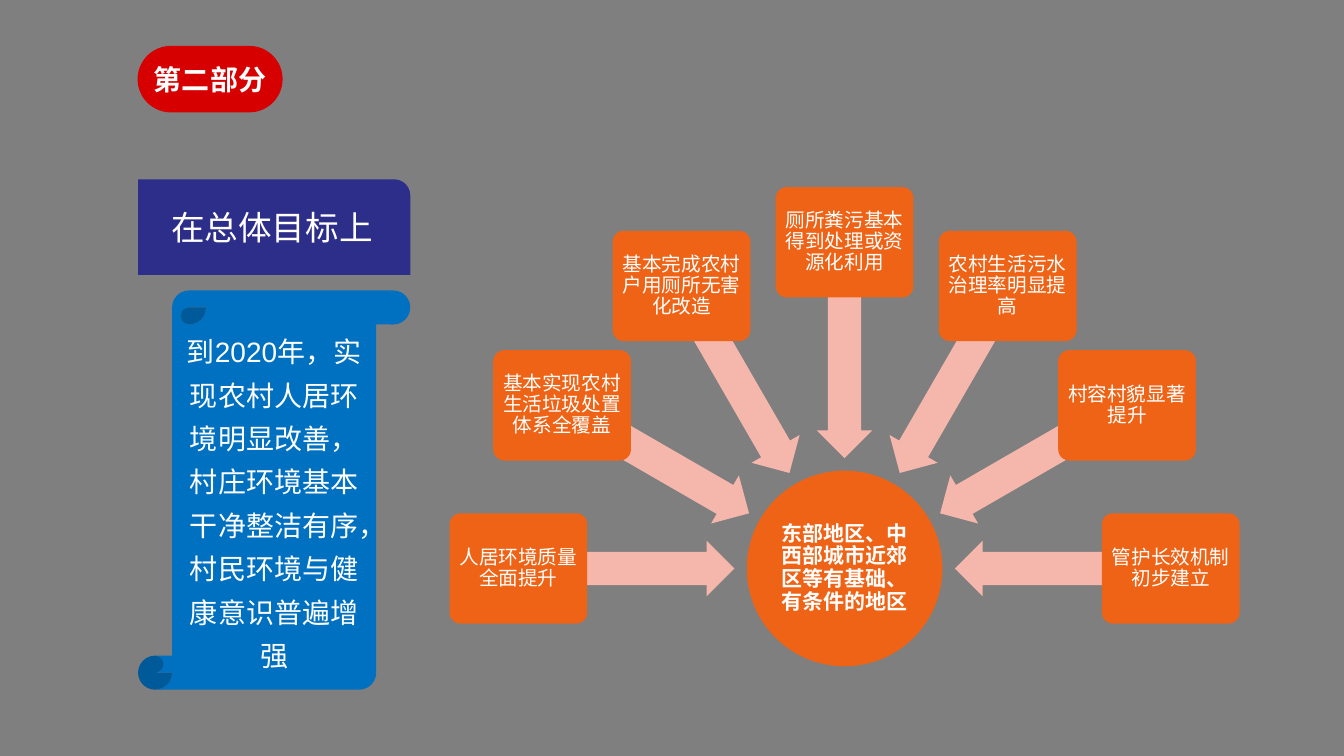
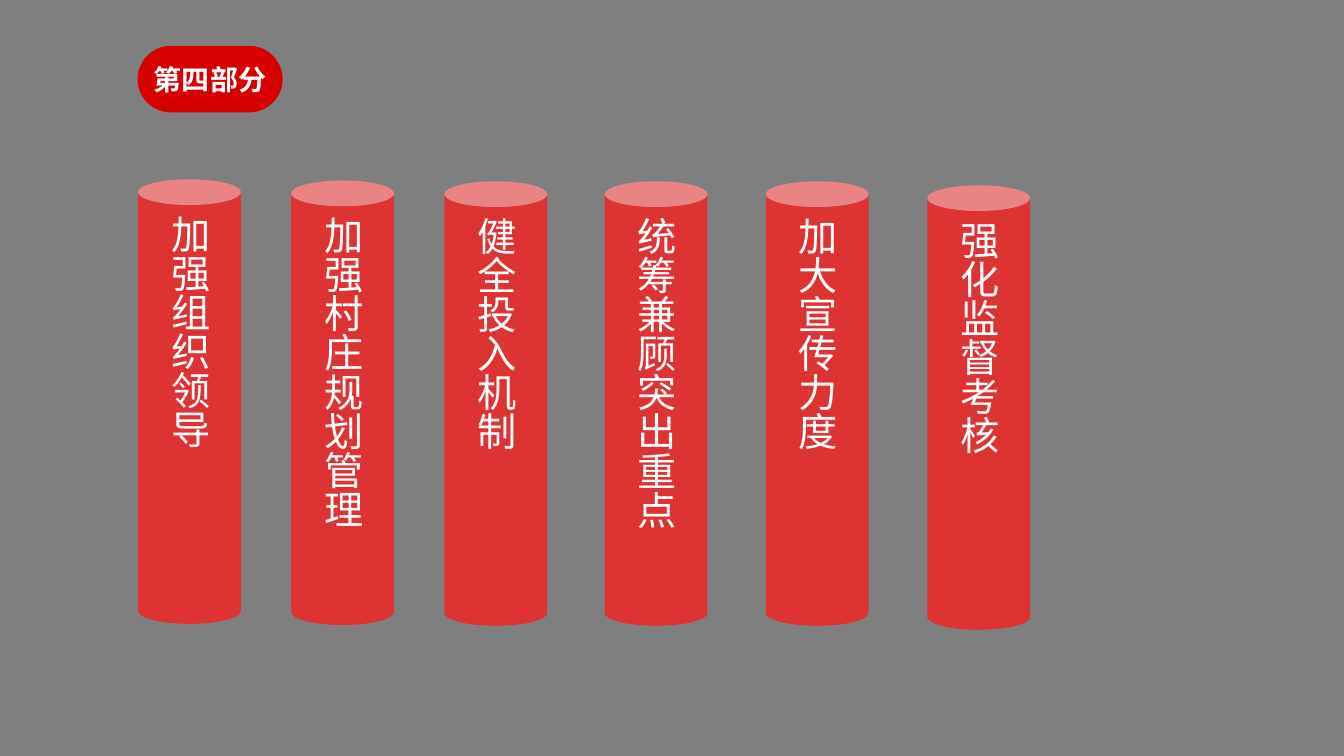
import math

import pptx
import pptx.dml.color
import pptx.enum.shapes
import pptx.enum.text
import pptx.oxml.ns
import pptx.util
from lxml import etree

Cm = pptx.util.Cm
Pt = pptx.util.Pt
KIND = pptx.enum.shapes.MSO_SHAPE

GREY, WHITE = "7F7F7F", "FFFFFF"
RED, ROSE = "D70000", "DD3333"
NAVY, BLUE = "2D2D8A", "0070C0"
AMBER, PEACH = "EE6316", "F5B7AC"
BODY, HEAD = "Arial", "Noto Sans CJK SC"

LEFT, TOP = 3.48, 4.52
BADGE = (LEFT, 1.17, 3.63, 1.65)
PANEL = (LEFT, TOP, 6.86, 12.86)
FAN = (11.33, 4.75, 19.91, 12.04)
CANS = (LEFT, TOP, 22.48, 11.2)

GOALS = [
    "人居环境质量全面提升",
    "基本实现农村生活垃圾处置体系全覆盖",
    "基本完成农村户用厕所无害化改造",
    "厕所粪污基本得到处理或资源化利用",
    "农村生活污水治理率明显提高",
    "村容村貌显著提升",
    "管护长效机制初步建立",
]
# Text, then offset to the right and down within the row
STEPS = [
    ("加强组织领导", 0, 0),
    ("加强村庄规划管理", 3.86, 0.03),
    ("健全投入机制", 7.72, 0.05),
    ("统筹兼顾突出重点", 11.76, 0.05),
    ("加大宣传力度", 15.82, 0.05),
    ("强化监督考核", 19.89, 0.15),
]


def paint(fill, color):
    fill.solid()
    fill.fore_color.rgb = pptx.dml.color.RGBColor.from_string(color)


def add(slide, kind, box, color, adj=()):
    """Add a flat shape without outline or shadow."""
    shape = slide.shapes.add_shape(kind, *[Cm(n) for n in box])
    shape.shadow.inherit = False
    paint(shape.fill, color)
    shape.line.fill.background()
    for i, part in enumerate(adj):
        shape.adjustments[i] = part
    return shape


def write(shape, text, size, bold=False, face=BODY, space=None, inset=None):
    """Put centred white text in a shape; inset is in cm."""
    frame = shape.text_frame
    frame.text = text
    frame.word_wrap = True
    frame.vertical_anchor = pptx.enum.text.MSO_ANCHOR.MIDDLE
    if inset is not None:
        frame.margin_left = frame.margin_right = Cm(inset)
        frame.margin_top = frame.margin_bottom = Cm(inset)
    para = frame.paragraphs[0]
    para.alignment = pptx.enum.text.PP_ALIGN.CENTER
    if space:
        para.line_spacing = space
    for run in para.runs:
        font = run.font
        font.size, font.bold, font.name = Pt(size), bold, face
        paint(font.fill, WHITE)
        east = etree.SubElement(run.font._element, pptx.oxml.ns.qn("a:ea"))
        east.set("typeface", face)


def badge(slide, box, text):
    shape = add(slide, KIND.ROUNDED_RECTANGLE, box, RED, [0.5])
    paint(shape.line.fill, RED)
    shape.line.width = Pt(0.75)
    write(shape, text, 20, bold=True, face=HEAD, inset=0)


def panel(slide, box, title, text):
    """Title bar with a scroll below it."""
    x, y, w, h = box
    bar, gap = 2.41, 0.39
    head = add(slide, KIND.ROUND_1_RECTANGLE, (x, y, w, bar), NAVY)
    write(head, title, 24)
    drop = bar + gap
    scroll = add(slide, KIND.VERTICAL_SCROLL, (x, y + drop, w, h - drop), BLUE)
    write(scroll, text, 20, space=Pt(31))


def fan(slide, box, core, goals):
    """Half ring of cards whose arrows point at a hub."""
    x, y, w, h = box
    hub, card, arrow = 4.93, (3.47, 2.78), (5.44, 1.4)
    mid, base = x + w / 2, y + h - hub / 2
    ring = (w - card[0]) / 2
    reach = ring - arrow[0] / 2

    def spot(size, dist, turn):
        angle = math.radians(turn)
        return (mid + dist * math.cos(angle) - size[0] / 2,
                base + dist * math.sin(angle) - size[1] / 2, *size)

    disc = add(slide, KIND.OVAL, spot((hub, hub), 0, 0), AMBER)
    write(disc, core, 15, bold=True, space=0.9, inset=0.03)
    for i, goal in enumerate(goals):
        turn = 180 + i * 180 / (len(goals) - 1)
        ray = add(slide, KIND.LEFT_ARROW, spot(arrow, reach, turn), PEACH,
                  [0.6, 0.5])
        ray.rotation = turn % 360
        tile = add(slide, KIND.ROUNDED_RECTANGLE, spot(card, ring, turn),
                   AMBER, [0.1])
        write(tile, goal, 14, space=0.9, inset=0.08)


def cans(slide, box, steps):
    """Row of upright cans with vertical text."""
    x, y, w, h = box
    wide = w - steps[-1][1]
    for text, right, down in steps:
        can = add(slide, KIND.CAN, (x + right, y + down, wide, h), ROSE)
        write(can, text, 28)
        can.element.txBody.bodyPr.set("vert", "eaVert")


def page(deck, part):
    slide = deck.slides.add_slide(deck.slide_layouts[6])
    badge(slide, BADGE, part)
    return slide


def main():
    deck = pptx.Presentation()
    deck.slide_width, deck.slide_height = Cm(33.87), Cm(19.05)
    paint(deck.slide_master.background.fill, GREY)

    aims = page(deck, "第二部分")
    panel(aims, PANEL, "在总体目标上",
          "到2020年，实现农村人居环境明显改善，村庄环境基本干净整洁有序，"
          "村民环境与健康意识普遍增强")
    fan(aims, FAN, "东部地区、中西部城市近郊区等有基础、有条件的地区", GOALS)

    cans(page(deck, "第四部分"), CANS, STEPS)
    deck.save("out.pptx")


if __name__ == "__main__":
    main()
